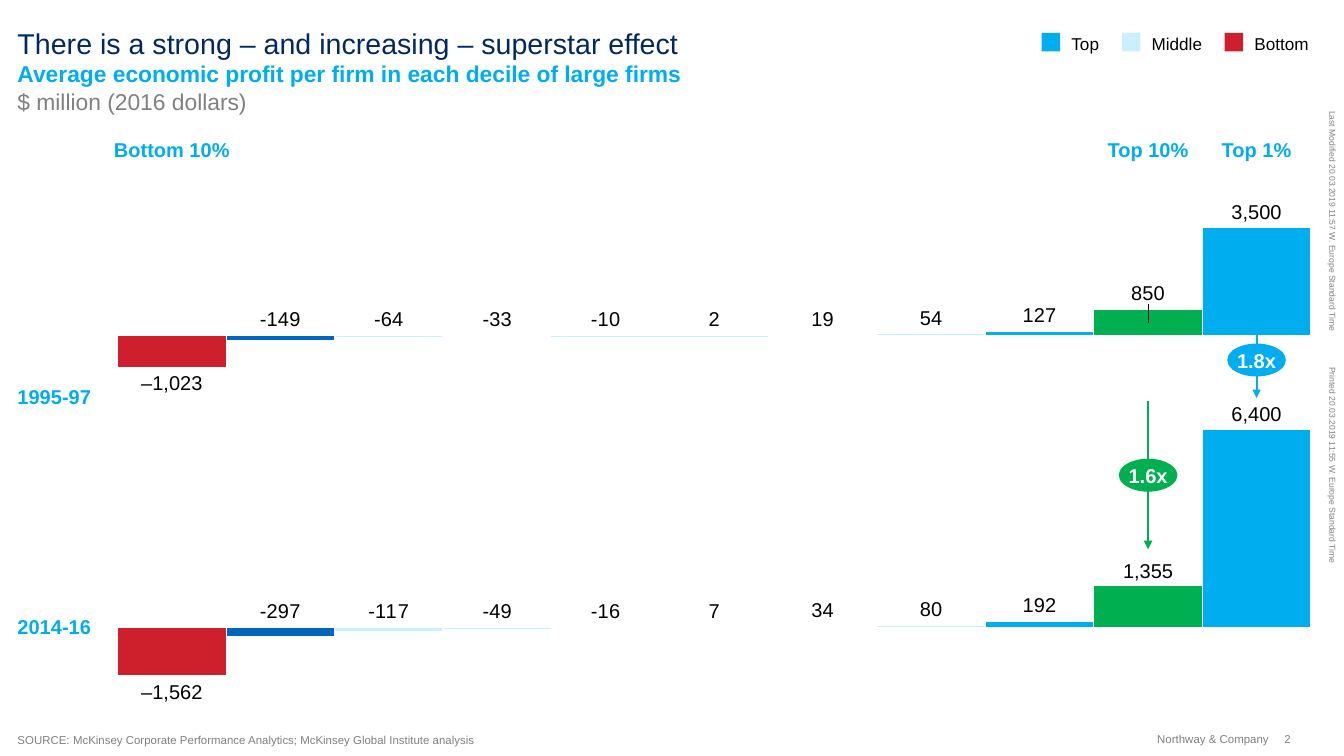
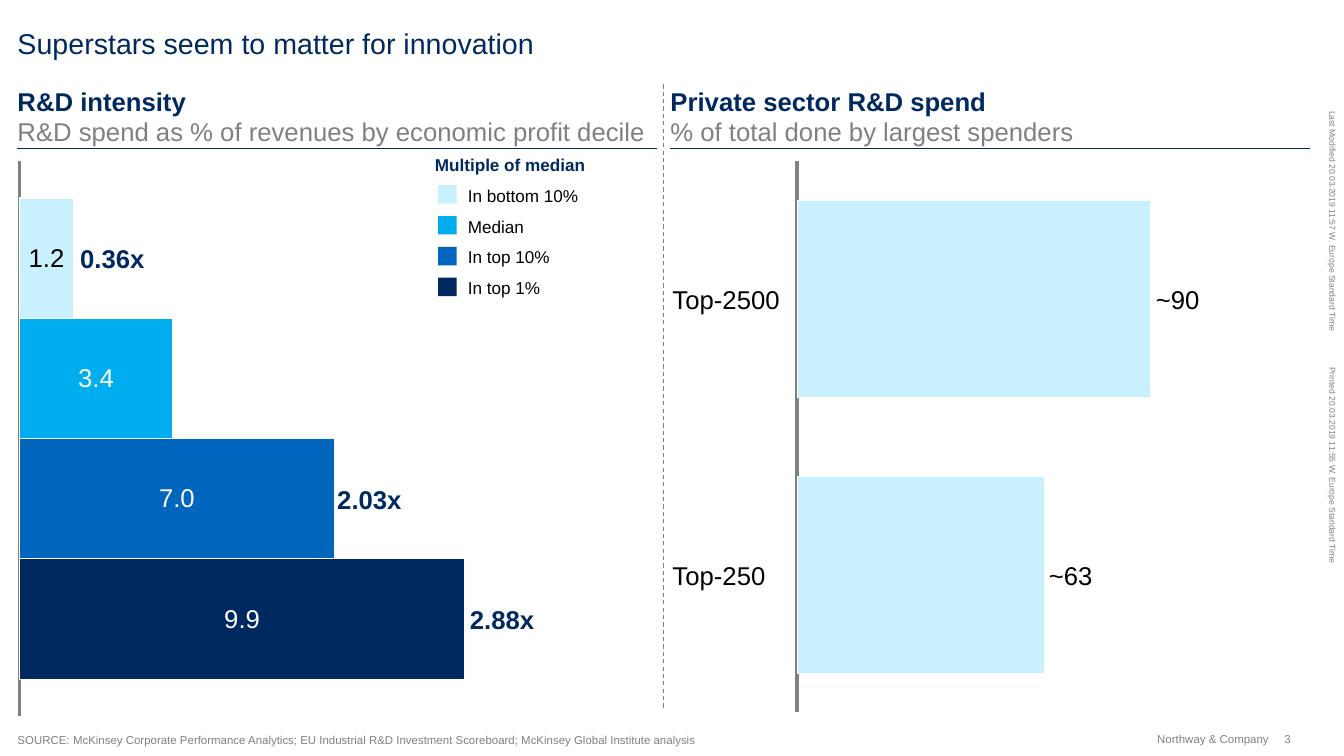
from lxml import etree
from pptx import Presentation
from pptx.chart.data import CategoryChartData
from pptx.dml.color import RGBColor
from pptx.enum.chart import XL_CHART_TYPE as ChartType
from pptx.enum.chart import XL_LABEL_POSITION as LabelPosition
from pptx.enum.chart import XL_TICK_LABEL_POSITION as TickLabels
from pptx.enum.chart import XL_TICK_MARK as TickMark
from pptx.enum.dml import MSO_LINE
from pptx.enum.shapes import MSO_CONNECTOR, MSO_SHAPE
from pptx.enum.text import MSO_ANCHOR as Anchor
from pptx.enum.text import PP_ALIGN as Align
from pptx.oxml.ns import qn
from pptx.util import Inches, Pt

FONT = "Arial"
COLORS = {
    "navy": "002960", "blue": "0065BD", "cyan": "00ADEF", "pale": "C9F0FF",
    "red": "CD202C", "green": "00B050", "gray": "808080",
    "black": "000000", "white": "FFFFFF",
}
MARGIN = 0.17
COMPANY = "Northway & Company"
SIDE_NOTES = [
    (1.08, "Last Modified 20.03.2019 11:57 W. Europe Standard Time"),
    (3.57, "Printed 20.03.2019 11:55 W. Europe Standard Time"),
]

# Slide 1: profit by decile
PROFIT_TITLE = [
    ("There is a strong – and increasing – superstar effect", 20, "navy", False),
    ("Average economic profit per firm in each decile of large firms", 16, "cyan", True),
    ("$ million (2016 dollars)", 16, "gray", False),
]
PROFIT_SOURCE = "McKinsey Corporate Performance Analytics; McKinsey Global Institute analysis"
PROFIT_LEGEND = [(10.13, "Top", "cyan"), (10.91, "Middle", "pale"), (11.91, "Bottom", "red")]
COLUMN_COLORS = ["red", "blue"] + ["pale"] * 6 + ["cyan", "green", "cyan"]
COLUMN_HEADINGS = [(0, "Bottom 10%"), (9, "Top 10%"), (10, "Top 1%")]
PERIODS = [
    {"name": "1995-97", "name_top": 3.74, "chart_top": 1.24, "axis": (-1580, 6425),
     "values": [-1023, -149, -64, -33, -10, 2, 19, 54, 127, 850, 3500],
     "labeled": range(1, 10),
     "large": [(0, 3.6, "–1,023"), (10, 1.94, "3,500")]},
    {"name": "2014-16", "name_top": 5.97, "chart_top": 4.07, "axis": (-1550, 6460),
     "values": [-1562, -297, -117, -49, -16, 7, 34, 80, 192, 1355, 6400],
     "labeled": range(1, 9),
     "large": [(0, 6.6, "–1,562"), (9, 5.43, "1,355"), (10, 3.9, "6,400")]},
]
GROWTH = [  # column, arrow start, arrow end, bubble top, text, color
    (9, 3.9, 5.34, 4.46, "1.6x", "green"),
    (10, 3.12, 3.87, 3.34, "1.8x", "cyan"),
]
CHART_LEFT, CHART_WIDTH, CHART_HEIGHT = 1.05, 11.78, 2.59
COLUMN_PLOT = (0.008, 0.035, 0.985, 0.93)
COLUMN_WIDTH = CHART_WIDTH * COLUMN_PLOT[2] / len(COLUMN_COLORS)

# Slide 2: R&D
INNOVATION_TITLE = [("Superstars seem to matter for innovation", 20, "navy", False)]
INNOVATION_SOURCE = ("McKinsey Corporate Performance Analytics; EU Industrial R&D Investment "
                     "Scoreboard; McKinsey Global Institute analysis")
PANELS = [
    (MARGIN, "R&D intensity", "R&D spend as % of revenues by economic profit decile"),
    (6.52, "Private sector R&D spend", "% of total done by largest spenders"),
]
INTENSITY = [  # group, share of revenues, bar color, label color
    ("In bottom 10%", 1.2, "pale", "black"),
    ("Median", 3.4, "cyan", "white"),
    ("In top 10%", 7.0, "blue", "white"),
    ("In top 1%", 9.9, "navy", "white"),
]
MULTIPLES = [(0.76, 2.36, "0.36x"), (3.26, 4.7, "2.03x"), (4.55, 5.87, "2.88x")]
SPENDERS = [  # name, bar length, label, label left, label top
    ("Top-2500", 100, "~90", 11.22, 2.76),
    ("Top-250", 70, "~63", 10.18, 5.44),
]


def rgb(color):
    return RGBColor.from_string(COLORS[color])


def set_font(font, size, color, bold=False):
    font.name, font.size, font.bold = FONT, Pt(size), bold
    font.color.rgb = rgb(color)


def fill_text(frame, lines, align=Align.LEFT, anchor=Anchor.TOP):
    """Write one paragraph for each (text, size, color, bold) line."""
    frame.margin_left = frame.margin_right = frame.margin_top = frame.margin_bottom = 0
    frame.word_wrap = True
    frame.vertical_anchor = anchor
    for index, (text, *style) in enumerate(lines):
        paragraph = frame.add_paragraph() if index else frame.paragraphs[0]
        paragraph.text = text
        paragraph.alignment = align
        set_font(paragraph.font, *style)


def add_text(slide, box, lines, align=Align.LEFT, anchor=Anchor.TOP):
    shape = slide.shapes.add_textbox(*map(Inches, box))
    fill_text(shape.text_frame, lines, align, anchor)
    return shape


def add_shape(slide, kind, box, color):
    shape = slide.shapes.add_shape(kind, *map(Inches, box))
    shape.shadow.inherit = False
    shape.fill.solid()
    shape.fill.fore_color.rgb = rgb(color)
    shape.line.fill.background()
    return shape


def add_line(slide, start, end, color, width, arrow=False):
    connector = slide.shapes.add_connector(MSO_CONNECTOR.STRAIGHT, *map(Inches, start + end))
    connector.line.color.rgb = rgb(color)
    connector.line.width = Pt(width)
    if arrow:
        etree.SubElement(connector.line._get_or_add_ln(), qn("a:tailEnd"), type="triangle")
    etree.SubElement(connector._element.spPr, qn("a:effectLst"))
    return connector


def add_legend_item(slide, left, top, label, color):
    add_shape(slide, MSO_SHAPE.RECTANGLE, (left, top, 0.18, 0.18), color)
    add_text(slide, (left + 0.29, top, 1.2, 0.2), [(label, 12, "black", False)],
             anchor=Anchor.MIDDLE)


def add_source(slide, source):
    shape = slide.shapes.add_textbox(*map(Inches, (MARGIN, 7.12, 10.88, 0.14)))
    properties = shape.text_frame.paragraphs[0]._p.get_or_add_pPr()
    properties.set("marL", str(Inches(0.54)))
    properties.set("indent", str(-Inches(0.54)))
    tabs = etree.SubElement(properties, qn("a:tabLst"))
    etree.SubElement(tabs, qn("a:tab"), pos=str(Inches(0.56)), algn="l")
    fill_text(shape.text_frame, [("SOURCE:\t" + source, 8, "gray", False)], anchor=Anchor.BOTTOM)


def add_slide(presentation, number, title, source):
    """Add a slide with the title, footer and side notes that all slides share."""
    slide = presentation.slides.add_slide(presentation.slide_layouts[6])
    add_text(slide, (MARGIN, 0.25, 9.29, 0.88), title)
    add_source(slide, source)
    add_text(slide, (10.84, 7.12, 1.5, 0.13), [(COMPANY, 8, "gray", False)],
             Align.RIGHT, Anchor.MIDDLE)
    add_text(slide, (12.49, 7.12, 0.14, 0.13), [(str(number), 8, "gray", False)],
             anchor=Anchor.MIDDLE)
    length, thickness, center = 2.4, 0.1, 12.96
    for top, note in SIDE_NOTES:
        box = (center - length / 2, top + (length - thickness) / 2, length, thickness)
        add_text(slide, box, [(note, 6, "gray", False)]).rotation = 90
    return slide


def add_layout(parent, position, **values):
    """Insert a manual chart layout into parent at the given child position."""
    layout = etree.Element(qn("c:layout"))
    manual = etree.SubElement(layout, qn("c:manualLayout"))
    for name, value in values.items():
        etree.SubElement(manual, qn("c:" + name), val=str(value))
    parent.insert(position, layout)


def add_bars(slide, kind, box, categories, series, axis, plot_area, gap, overlap=None):
    """Add a chart without legend, gridlines or value axis."""
    data = CategoryChartData()
    data.categories = categories
    for name, values in series:
        data.add_series(name, values)
    chart = slide.shapes.add_chart(kind, *map(Inches, box), data).chart
    chart.has_legend = chart.has_title = False
    set_font(chart.font, 10, "black")
    value_axis, category_axis = chart.value_axis, chart.category_axis
    value_axis.minimum_scale, value_axis.maximum_scale = axis
    value_axis.has_major_gridlines = value_axis.visible = False
    category_axis.tick_label_position = TickLabels.NONE
    category_axis.major_tick_mark = category_axis.minor_tick_mark = TickMark.NONE
    plot = chart.plots[0]
    plot.vary_by_categories = False
    plot.gap_width = gap
    if overlap is not None:
        plot.overlap = overlap
    area = chart.element.find(".//" + qn("c:plotArea"))
    for layout in area.findall(qn("c:layout")):
        area.remove(layout)
    x, y, width, height = plot_area
    add_layout(area, 0, layoutTarget="inner", xMode="edge", yMode="edge",
               x=x, y=y, w=width, h=height)
    return chart


def paint(bar, color, line_width=0.75):
    bar.format.fill.solid()
    bar.format.fill.fore_color.rgb = rgb(color)
    bar.format.line.color.rgb = rgb("white")
    bar.format.line.width = Pt(line_width)


def column_center(column):
    return CHART_LEFT + CHART_WIDTH * COLUMN_PLOT[0] + (column + 0.5) * COLUMN_WIDTH


def add_period_chart(slide, period):
    values, (low, high) = period["values"], period["axis"]
    box = (CHART_LEFT, period["chart_top"], CHART_WIDTH, CHART_HEIGHT)
    chart = add_bars(slide, ChartType.COLUMN_STACKED, box, range(1, len(values) + 1),
                     [("Profit", values)], (low, high), COLUMN_PLOT, 0, 100)
    chart.category_axis.format.line.fill.background()
    series = chart.plots[0].series[0]
    series.invert_if_negative = False
    paint(series, "pale")
    for column, color in enumerate(COLUMN_COLORS):
        paint(series.points[column], color)
    for column in period["labeled"]:
        label = series.points[column].data_label
        set_font(label.font, 14, "black")
        label.position = LabelPosition.CENTER
    series.data_labels.show_value = False
    # Lift each label from the middle of its bar to just above it
    for label, column in zip(chart.element.iter(qn("c:dLbl")), period["labeled"]):
        half_bar = abs(values[column]) / 2 / (high - low) * COLUMN_PLOT[3]
        add_layout(label, 1, x=0, y=round(-0.06 - half_bar, 3))


def build_profit_slide(presentation):
    slide = add_slide(presentation, 2, PROFIT_TITLE, PROFIT_SOURCE)
    for left, label, color in PROFIT_LEGEND:
        add_legend_item(slide, left, 0.32, label, color)

    def add_column_text(column, top, text, color, bold):
        box = (column_center(column) - 0.62, top, 1.24, 0.24)
        add_text(slide, box, [(text, 14, color, bold)], Align.CENTER, Anchor.MIDDLE)

    for period in PERIODS:
        add_period_chart(slide, period)
        add_text(slide, (MARGIN, period["name_top"], 1.08, 0.24),
                 [(period["name"], 14, "cyan", True)])
        for column, top, text in period["large"]:
            add_column_text(column, top, text, "black", False)
    for column, text in COLUMN_HEADINGS:
        add_column_text(column, 1.33, text, "cyan", True)
    for column, start, end, top, text, color in GROWTH:
        center = column_center(column)
        add_line(slide, (center, start), (center, end), color, 1.5, arrow=True)
        bubble = add_shape(slide, MSO_SHAPE.OVAL, (center - 0.285, top, 0.57, 0.32), color)
        fill_text(bubble.text_frame, [(text, 14, "white", True)], Align.CENTER, Anchor.MIDDLE)
        bubble.text_frame.word_wrap = False


def build_innovation_slide(presentation):
    slide = add_slide(presentation, 3, INNOVATION_TITLE, INNOVATION_SOURCE)
    for left, heading, unit in PANELS:
        add_text(slide, (left, 0.8, 6.22, 0.63),
                 [(heading, 18, "navy", True), (unit, 18, "gray", False)], anchor=Anchor.BOTTOM)
        add_line(slide, (left, 1.44), (left + 6.22, 1.44), "navy", 0.75)
    divider = add_line(slide, (6.45, 0.82), (6.45, 6.91), "gray", 0.75)
    divider.line.dash_style = MSO_LINE.DASH

    intensity = add_bars(slide, ChartType.BAR_CLUSTERED, (0.1, 1.48, 4.51, 5.57), ["R&D"],
                         [(name, [value]) for name, value, *_ in INTENSITY],
                         (0, 9.9), (0.02, 0.016, 0.96, 0.968), 61, 0)
    spend = add_bars(slide, ChartType.BAR_STACKED, (7.66, 1.48, 3.62, 5.54),
                     [name for name, *_ in SPENDERS],
                     [("Spend", [length for _, length, *_ in SPENDERS])],
                     (0, 100), (0.025, 0.016, 0.95, 0.967), 40, 100)
    for chart in (intensity, spend):
        chart.category_axis.reverse_order = True
        chart.category_axis.format.line.color.rgb = rgb("gray")
        chart.category_axis.format.line.width = Pt(2.25)
    paint(spend.plots[0].series[0], "pale", 0.25)

    add_text(slide, (4.23, 1.5, 1.8, 0.2), [("Multiple of median", 12, "navy", True)])
    for index, (name, _, color, label_color) in enumerate(INTENSITY):
        series = intensity.plots[0].series[index]
        paint(series, color)
        labels = series.data_labels
        labels.show_value = True
        labels.number_format, labels.number_format_is_linked = "0.0", False
        labels.position = LabelPosition.CENTER
        set_font(labels.font, 18, label_color)
        add_legend_item(slide, 4.26, 1.8 + 0.3 * index, name, color)

    def add_bar_text(left, top, text, color="black", bold=False):
        add_text(slide, (left, top, 1.2, 0.3), [(text, 18, color, bold)], anchor=Anchor.MIDDLE)

    for left, top, text in MULTIPLES:
        add_bar_text(left + 0.02, top, text, "navy", True)
    for name, _, text, left, top in SPENDERS:
        add_bar_text(6.54, top, name)
        add_bar_text(left + 0.02, top, text)


def main():
    presentation = Presentation()
    presentation.slide_width, presentation.slide_height = Inches(13.07), Inches(7.35)
    build_profit_slide(presentation)
    build_innovation_slide(presentation)
    presentation.save("out.pptx")


if __name__ == "__main__":
    main()
